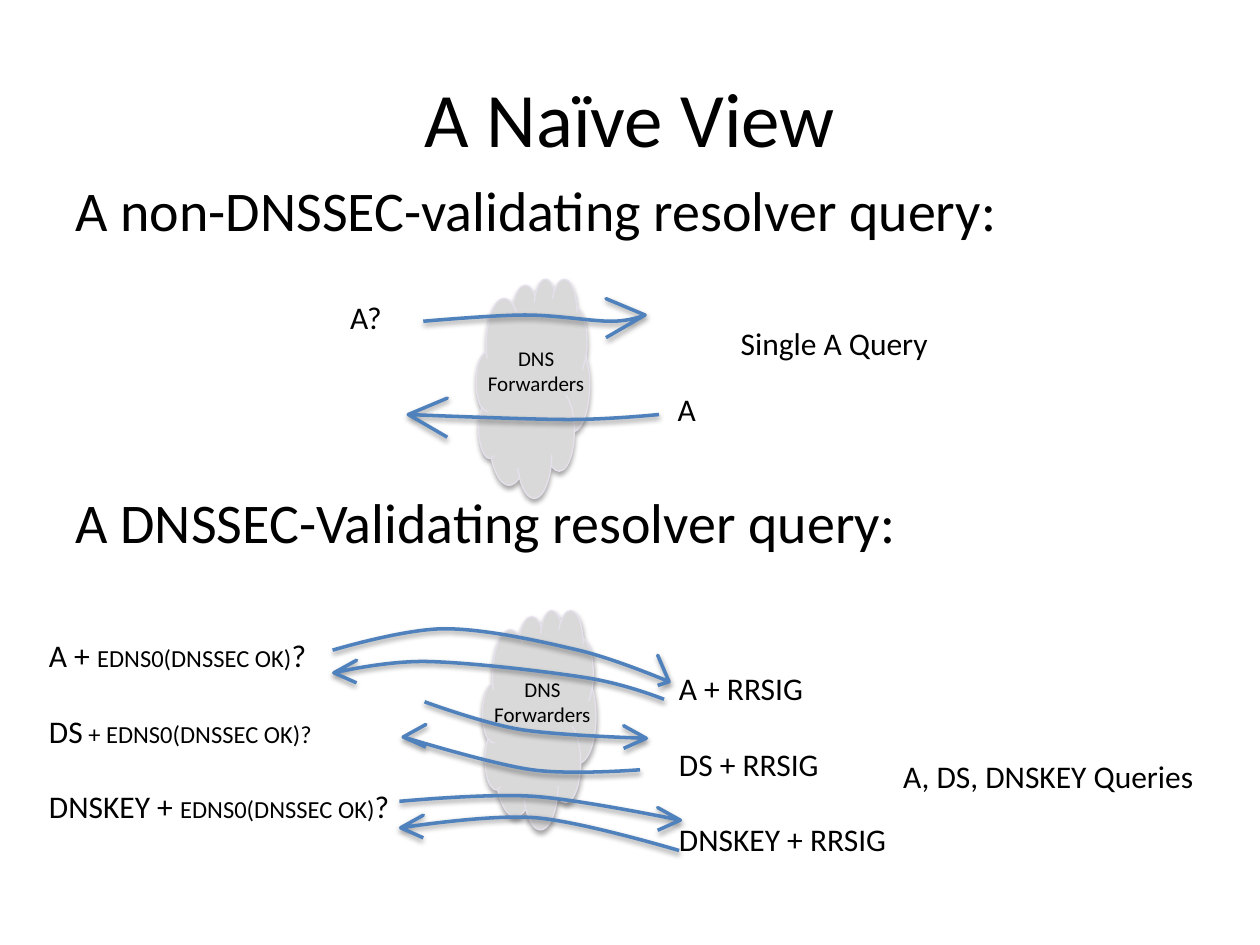
"""Build the slide comparing plain and DNSSEC-validating resolver queries."""
import pptx
import pptx.dml.color
import pptx.enum.shapes
import pptx.enum.text
import pptx.oxml
import pptx.oxml.ns
import pptx.util

WIDTH, HEIGHT = 10, 7.5
MARGIN = WIDTH / 20
FONT, INK, CLOUD, CLOUD_EDGE, ARROW = "Calibri", "000000", "D9D9D9", "E6E0EC", "4F81BD"
TITLE_SIZE, HEADING_SIZE, LABEL_SIZE, SMALL_SIZE, CLOUD_TEXT_SIZE = 44, 32, 18, 14, 12
HEADING_GAP, LIST_GAP = 140.4, 21.6
LINE_BOX, LIST_BOX = 0.4, 1.62
EDNS = ("EDNS0(DNSSEC OK)", SMALL_SIZE)

TITLE = [[("A Naïve View", TITLE_SIZE)]]
HEADINGS = [[("A non-DNSSEC-validating resolver query:", HEADING_SIZE)],
            [("A DNSSEC-Validating resolver query:", HEADING_SIZE)]]
CLOUD_LABEL = [[("DNS Forwarders", CLOUD_TEXT_SIZE)]]
CLOUD_SIZE = (0.9, 1.74)
CLOUD_PLACES = [(3.78, 2.21), (3.83, 4.84)]
QUESTIONS = [[("A + ", LABEL_SIZE), EDNS, ("?", LABEL_SIZE)],
             [("DS", LABEL_SIZE), (" + EDNS0(DNSSEC OK)?", SMALL_SIZE)],
             [("DNSKEY + ", LABEL_SIZE), EDNS, ("?", LABEL_SIZE)]]
ANSWERS = [[(record + " + RRSIG", LABEL_SIZE)] for record in ("A", "DS", "DNSKEY")]
LABELS = [
    ((2.68, 2.32, 0.46, LINE_BOX), [[("A?", LABEL_SIZE)]]),
    ((5.28, 3.05, 0.35, LINE_BOX), [[("A", LABEL_SIZE)]]),
    ((5.78, 2.52, 1.7, LINE_BOX), [[("Single A Query", LABEL_SIZE)]]),
    ((7.07, 5.96, 2.53, LINE_BOX), [[("A, DS, DNSKEY Queries", LABEL_SIZE)]]),
    ((0.29, 5, 2.93, LIST_BOX), QUESTIONS),
    ((5.29, 5.26, 1.87, LIST_BOX), ANSWERS),
]
HEADS = {"wide": (0.31, 0.13, 0.18), "narrow": (0.18, 0.1, 0.08), "steep": (0.09, 0.21, 0.03)}
ARROWS = [
    ("wide", [(3.36, 2.55), (4.17, 2.5), (4.85, 2.55), (5.12, 2.5)]),
    ("wide", [(5.23, 3.29), (4.51, 3.33), (3.24, 3.29)]),
    ("steep", [(2.64, 5.16), (3.53, 4.99), (4.59, 5.16), (5.31, 5.41)]),
    ("narrow", [(5.27, 5.55), (4.66, 5.38), (3.39, 5.25), (2.65, 5.34)]),
    ("narrow", [(3.37, 5.57), (4.13, 5.79), (5.13, 5.86)]),
    ("narrow", [(5.08, 6.11), (4.22, 6.11), (3.2, 5.85)]),
    ("narrow", [(3.17, 6.36), (4.23, 6.32), (5.4, 6.51)]),
    ("narrow", [(5.39, 6.75), (4.25, 6.49), (3.18, 6.57)]),
]


def color(value):
    return pptx.dml.color.RGBColor.from_string(value)


def inches(values):
    return [pptx.util.Inches(value) for value in values]


def add_text(page, place, paragraphs, gap=0, wrap=False, **formats):
    box = page.shapes.add_textbox(*inches(place))
    frame = box.text_frame
    frame.word_wrap = wrap
    frame.vertical_anchor = formats.pop("anchor", pptx.enum.text.MSO_ANCHOR.TOP)
    for index, spans in enumerate(paragraphs):
        para = frame.add_paragraph() if index else frame.paragraphs[0]
        for name, value in dict(formats, space_before=pptx.util.Pt(gap if index else 0)).items():
            setattr(para, name, value)
        for text, size in spans:
            span = para.add_run()
            span.text = text
            for name, value in {"name": FONT, "size": pptx.util.Pt(size)}.items():
                setattr(span.font, name, value)
            span.font.color.rgb = color(INK)


def style_outline(shape, line, weight, distance, opacity):
    shape.line.color.rgb = color(line)
    shape.line.width = pptx.util.Pt(weight)
    shape.shadow.inherit = False
    effects = shape.element.spPr.find(pptx.oxml.ns.qn("a:effectLst"))
    effects.append(pptx.oxml.parse_xml(
        f'<a:outerShdw {pptx.oxml.ns.nsdecls("a")} blurRad="{pptx.util.Pt(3.1)}" '
        f'dist="{pptx.util.Pt(distance)}" dir="5400000" rotWithShape="0">'
        f'<a:srgbClr val="000000"><a:alpha val="{opacity * 1000}"/></a:srgbClr></a:outerShdw>'))


def add_cloud(page, left, top):
    shape = page.shapes.add_shape(pptx.enum.shapes.MSO_SHAPE.CLOUD, *inches((left, top, *CLOUD_SIZE)))
    shape.fill.solid()
    shape.fill.fore_color.rgb = color(CLOUD)
    style_outline(shape, CLOUD_EDGE, 0.75, 1.8, 35)
    add_text(page, (left - 0.05, top + 0.48, 1.05, 0.5), CLOUD_LABEL, wrap=True,
             alignment=pptx.enum.text.PP_ALIGN.CENTER)


def arrow_points(head, shaft):
    """Return the start and Bézier triples of a smooth shaft with a straight-sided head."""
    reach, rise, fall = HEADS[head]
    tip_x, tip_y = shaft[-1]
    back = -reach if tip_x > shaft[0][0] else reach
    knots = shaft + [(tip_x + back, tip_y - rise), shaft[-1], (tip_x + back, tip_y + fall)]
    slopes = [(0, 0)] * len(knots)
    for index in range(1, len(shaft) - 1):
        slopes[index] = [(after - before) / 6 for before, after in zip(knots[index - 1], knots[index + 1])]
    points = [knots[0]]
    for index in range(1, len(knots)):
        (x1, y1), (x2, y2) = knots[index - 1:index + 1]
        (dx1, dy1), (dx2, dy2) = slopes[index - 1:index + 1]
        points += [(x1 + dx1, y1 + dy1), (x2 - dx2, y2 - dy2), (x2, y2)]
    return points


def add_curve(page, points):
    """Draw a freeform whose points after the first are cubic Bézier triples."""
    start, *rest = [inches(point) for point in points]
    builder = page.shapes.build_freeform(*start)
    builder.add_line_segments(rest, close=False)
    shape = builder.convert_to_shape()
    shape.fill.background()
    style_outline(shape, ARROW, 2, 1.6, 38)
    segments = list(shape.element.iter(pptx.oxml.ns.qn("a:lnTo")))
    for first in range(0, len(segments), 3):
        curve = pptx.oxml.parse_xml(f'<a:cubicBezTo {pptx.oxml.ns.nsdecls("a")}/>')
        segments[first].addprevious(curve)
        for segment in segments[first:first + 3]:
            curve.append(segment[0])
            segment.getparent().remove(segment)


def main():
    deck = pptx.Presentation()
    deck.slide_width, deck.slide_height = inches((WIDTH, HEIGHT))
    page = deck.slides.add_slide(deck.slide_layouts[6])
    add_text(page, (MARGIN, 1.34, WIDTH - 2 * MARGIN, 4.04), HEADINGS, gap=HEADING_GAP, wrap=True)
    add_text(page, (MARGIN, 0.3, WIDTH - 2 * MARGIN, HEIGHT / 6), TITLE, wrap=True,
             anchor=pptx.enum.text.MSO_ANCHOR.MIDDLE, alignment=pptx.enum.text.PP_ALIGN.CENTER)
    for left, top in CLOUD_PLACES:
        add_cloud(page, left, top)
    for place, paragraphs in LABELS:
        add_text(page, place, paragraphs, gap=LIST_GAP)
    for head, shaft in ARROWS:
        add_curve(page, arrow_points(head, shaft))
    deck.save("out.pptx")


if __name__ == "__main__":
    main()
